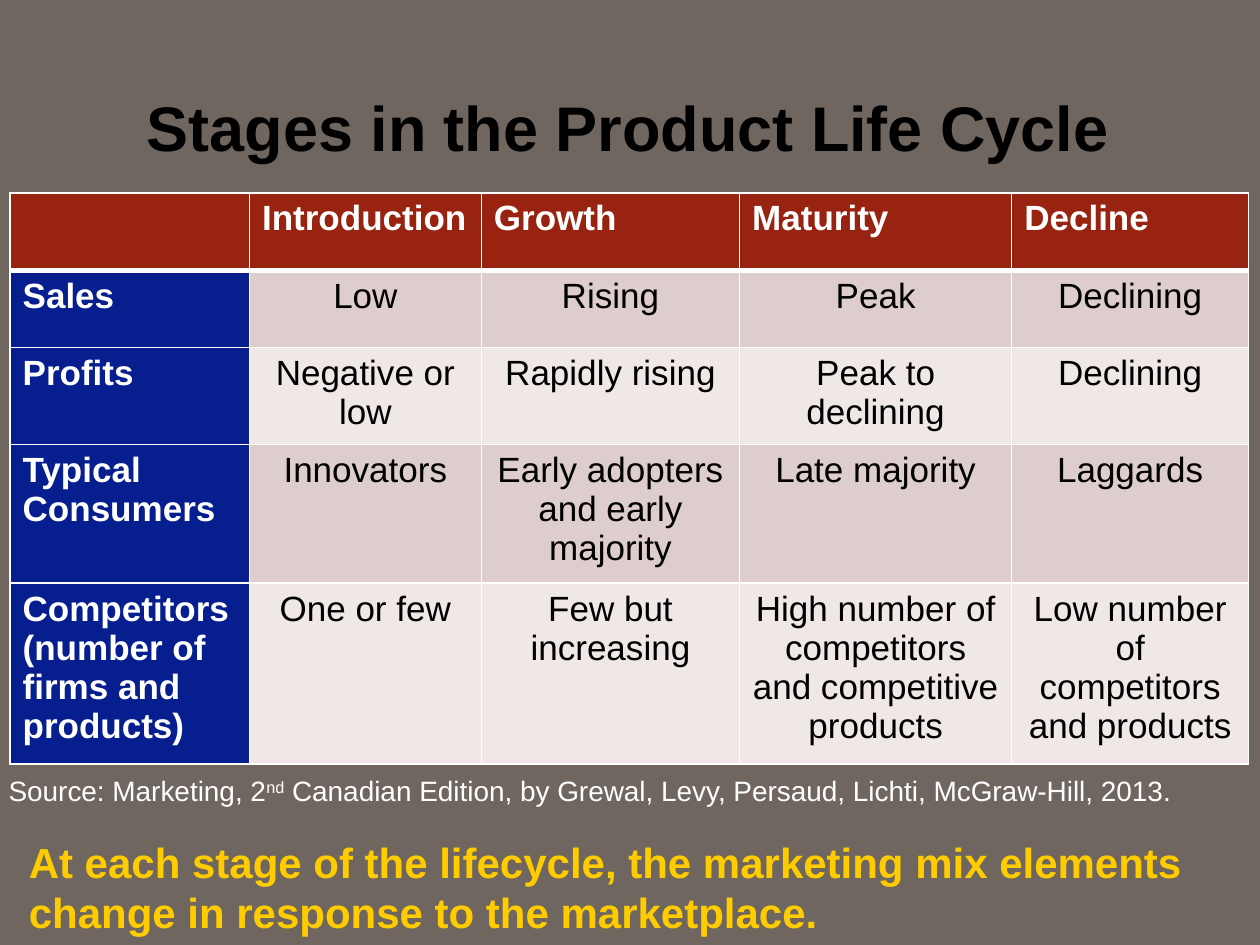
"""Build the product life cycle slide."""
from lxml import etree
from pptx import Presentation
from pptx import util as u
from pptx.dml.color import RGBColor
from pptx.enum import text
from pptx.oxml import ns

TITLE = "Stages in the Product Life Cycle"
NOTE = "At each stage of the lifecycle, the marketing mix elements change in response to the marketplace."
SOURCE = [
    ("Source: Marketing, 2", False),
    ("nd", True),
    (" Canadian Edition, by Grewal, Levy, Persaud, Lichti, McGraw-Hill, 2013.", False),
]
ROWS = [
    ("", "Introduction", "Growth", "Maturity", "Decline"),
    ("Sales", "Low", "Rising", "Peak", "Declining"),
    ("Profits", "Negative or low", "Rapidly rising", "Peak to declining", "Declining"),
    ("Typical Consumers", "Innovators", "Early adopters and early majority",
     "Late majority", "Laggards"),
    ("Competitors (number of firms and products)", "One or few", "Few but increasing",
     "High number of competitors and competitive products",
     "Low number of competitors and products"),
]
WIDTHS = [136.8, 132.5, 147.6, 155.5, 135.4]
HEIGHTS = [44.6, 43.9, 55.4, 79.2, 103]

THEME = {
    "face": "Arial", "back": "706660", "head": "982310", "side": "071E8F",
    "bands": ("EFE8E7", "DDCDCC"), "dark": "000000", "light": "FFFFFF", "gold": "FFCC00",
    "title": 36, "note": 24, "cell": 20, "source": 16,
}
LEFT, MID = text.PP_ALIGN.LEFT, text.PP_ALIGN.CENTER


def paint(fill, tone):
    """Fill with a solid colour."""
    fill.solid()
    fill.fore_color.rgb = RGBColor.from_string(THEME[tone] if tone in THEME else tone)


def write(para, words, size, tone, bold=False):
    """Add a styled run and return it."""
    run = para.add_run()
    run.text = words
    form = {"name": THEME["face"], "size": u.Pt(THEME[size]), "bold": bold}
    for key, value in form.items():
        setattr(run.font, key, value)
    paint(run.font.fill, tone)
    return run


def box(slide, place, anchor=text.MSO_ANCHOR.TOP):
    """Add a wrapping text box and return its first paragraph."""
    frame = slide.shapes.add_textbox(*map(u.Pt, place)).text_frame
    frame.word_wrap = True
    frame.vertical_anchor = anchor
    return frame.paragraphs[0]


def shade(run):
    """Give a run a light shadow down and to the right."""
    fill = run._r.get_or_add_rPr().find(ns.qn("a:solidFill"))
    effect = etree.Element(ns.qn("a:effectLst"))
    drop = etree.SubElement(effect, ns.qn("a:outerShdw"), dist="35921", dir="2700000")
    etree.SubElement(drop, ns.qn("a:srgbClr"), val=THEME["light"])
    fill.addnext(effect)


def edge(cell, sides):
    """Draw cell borders of the given widths in points."""
    props = cell._tc.get_or_add_tcPr()
    for spot, (side, width) in enumerate(sides.items()):
        line = etree.Element(ns.qn(f"a:ln{side}"), w=str(u.Pt(width)))
        fill = etree.SubElement(line, ns.qn("a:solidFill"))
        etree.SubElement(fill, ns.qn("a:srgbClr"), val=THEME["light"])
        props.insert(spot, line)


def grid(slide):
    """Add the table of stages."""
    place = (5.76, 110.16, sum(WIDTHS), sum(HEIGHTS))
    table = slide.shapes.add_table(len(ROWS), len(WIDTHS), *map(u.Pt, place)).table
    table.first_row = table.horz_banding = False
    for col, width in zip(table.columns, WIDTHS):
        col.width = u.Pt(width)
    for r, (row, height) in enumerate(zip(ROWS, HEIGHTS)):
        table.rows[r].height = u.Pt(height)
        for c, words in enumerate(row):
            cell = table.cell(r, c)
            label = r == 0 or c == 0
            tone = "head" if r == 0 else "side" if c == 0 else THEME["bands"][r % 2]
            paint(cell.fill, tone)
            edge(cell, {"L": 1, "R": 1, "T": 3 if r == 1 else 1, "B": 3 if r == 0 else 1})
            para = cell.text_frame.paragraphs[0]
            para.alignment = LEFT if label else MID
            if words:
                write(para, words, "cell", "light" if label else "dark", label)


def main():
    """Build and save the slide."""
    deck = Presentation()
    deck.slide_width, deck.slide_height = u.Pt(720), u.Pt(540)
    slide = deck.slides.add_slide(deck.slide_layouts[6])
    paint(slide.background.fill, "back")

    para = box(slide, (46.8, 41.76, 624.24, 60.48), text.MSO_ANCHOR.MIDDLE)
    para.alignment = MID
    shade(write(para, TITLE, "title", "dark", True))

    write(box(slide, (9.36, 474.48, 678.24, 65.52)), NOTE, "note", "gold", True)

    para = box(slide, (-2.16, 438.48, 720, 26.64))
    for words, raised in SOURCE:
        run = write(para, words, "source", "light")
        if raised:
            run._r.get_or_add_rPr().set("baseline", "30000")

    grid(slide)
    deck.save("out.pptx")


if __name__ == "__main__":
    main()
